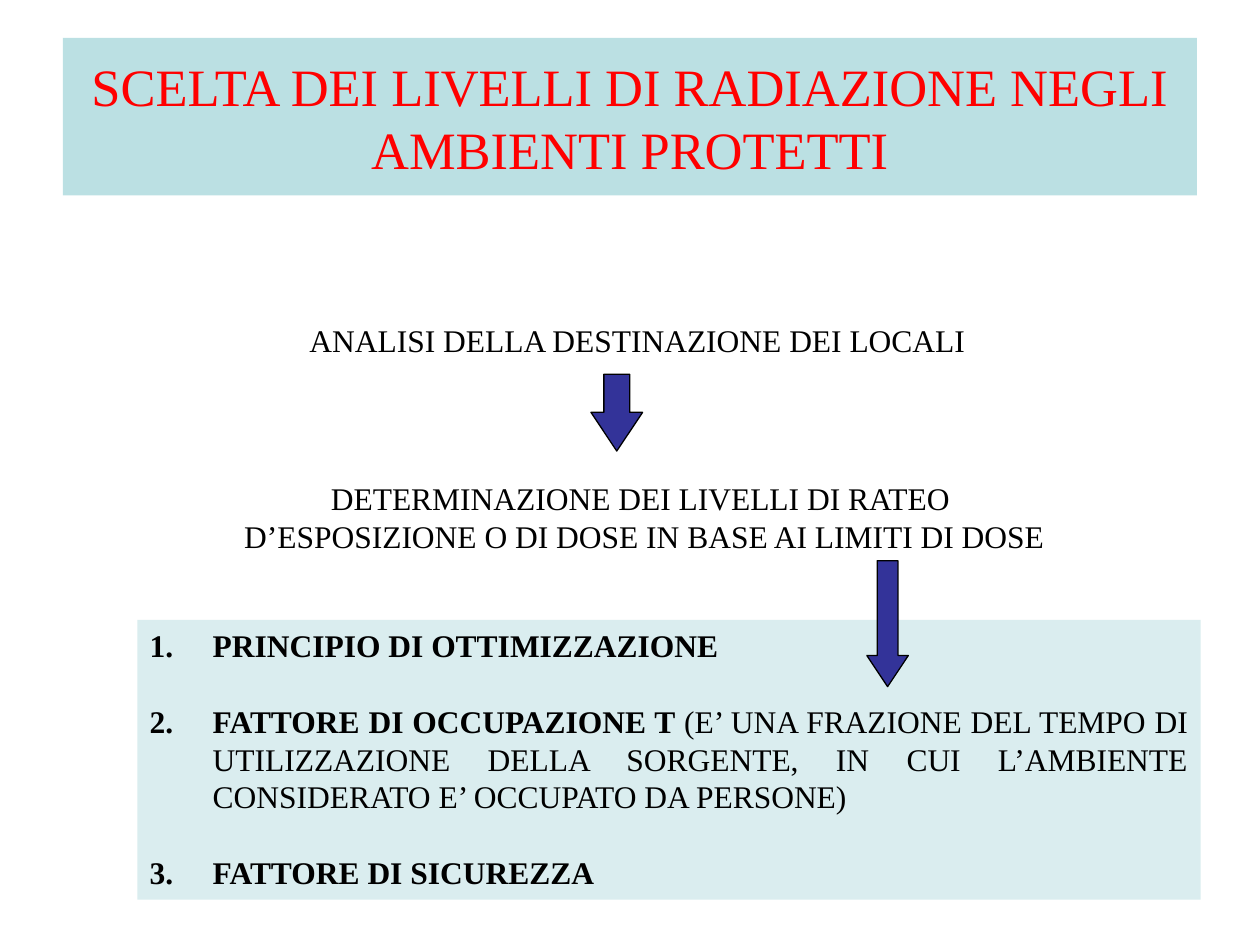
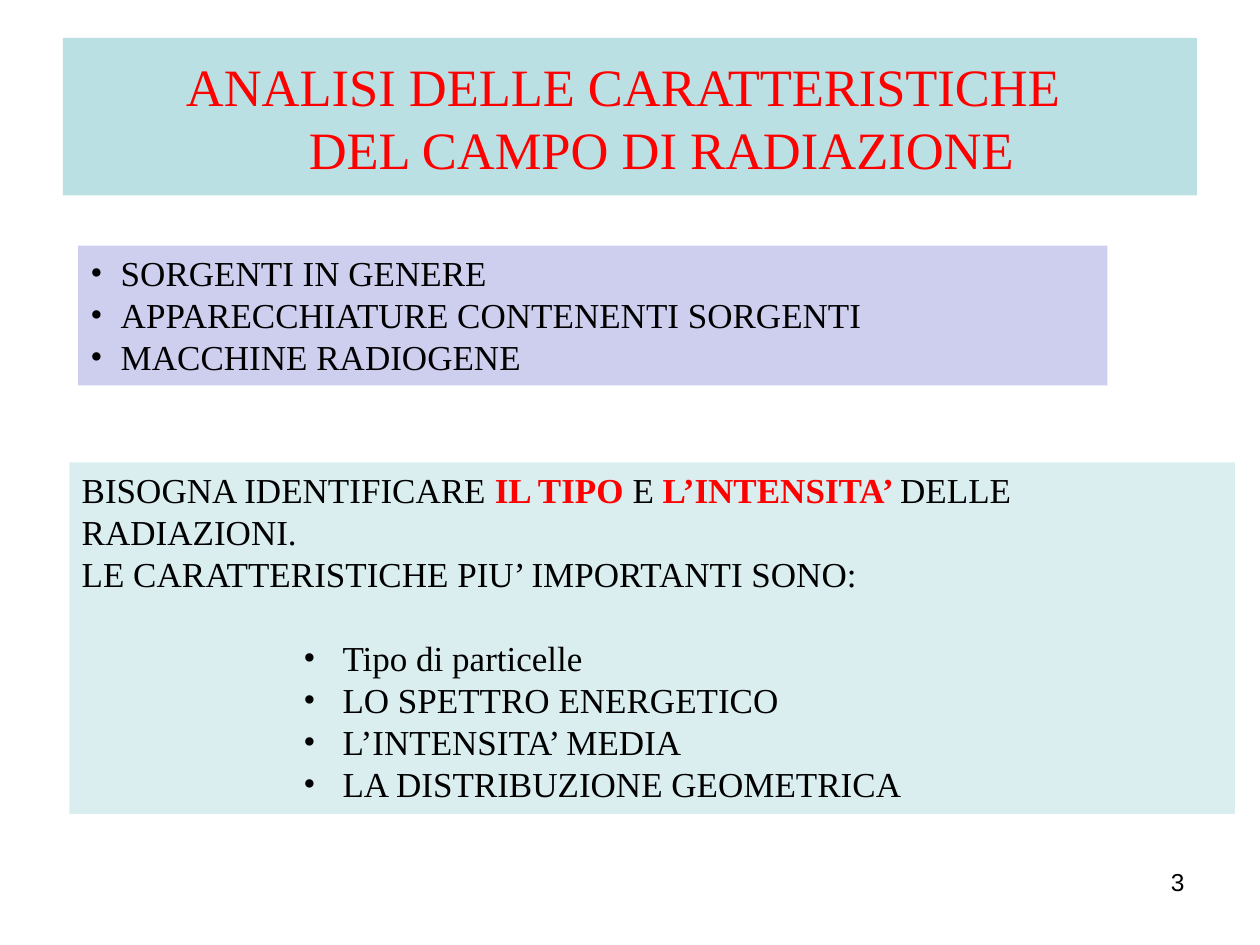
import pptx
import pptx.util
import pptx.dml.color
import pptx.enum.shapes
import pptx.enum.text
import pptx.oxml.xmlchemy
from lxml import etree

Inches, Pt = pptx.util.Inches, pptx.util.Pt
RGBColor = pptx.dml.color.RGBColor
ALIGN = pptx.enum.text.PP_ALIGN
SHAPE = pptx.enum.shapes.MSO_SHAPE

BLACK = RGBColor(0x00, 0x00, 0x00)
RED = RGBColor(0xFF, 0x00, 0x00)
BAND = RGBColor(0xBB, 0xE0, 0xE3)
PALE_TEAL = RGBColor(0xDA, 0xED, 0xEF)
LILAC = RGBColor(0xCE, 0xCE, 0xEF)
NAVY = RGBColor(0x33, 0x33, 0x99)
SERIF, SANS = "Times New Roman", "Arial"
LINE_HEIGHT = 1.2


def add_block(s, box, paragraphs, size, fill=None, align=ALIGN.LEFT, font=SERIF, color=BLACK):
    """Add a text block; each paragraph is a list of (text, bold, colour or None) runs."""
    box = [Inches(v) for v in box]
    if fill is None:
        sp = s.shapes.add_textbox(*box)
    else:
        sp = s.shapes.add_shape(SHAPE.RECTANGLE, *box)
        sp.shadow.inherit = False
        sp.fill.solid()
        sp.fill.fore_color.rgb = fill
        sp.line.fill.background()
    tf = sp.text_frame
    tf.word_wrap = True
    tf.vertical_anchor = pptx.enum.text.MSO_ANCHOR.TOP
    for i, runs in enumerate(paragraphs):
        p = tf.add_paragraph() if i else tf.paragraphs[0]
        p.alignment = align
        p.text = "".join(runs[0][0]) if len(runs) == 1 else ""
        for text, bold, run_color in runs:
            if len(runs) > 1:
                p.add_run().text = text
            for r in p.runs[-1:] if len(runs) > 1 else p.runs:
                r.font.name, r.font.size, r.font.bold = font, Pt(size), bold
                r.font.color.rgb = run_color or color
    return tf


def set_marker(p, margin, hanging, tag=None, **attributes):
    """Give a paragraph a hanging indent and, if a tag is named, a bullet or number."""
    pPr = p._p.get_or_add_pPr()
    pPr.set("marL", str(Inches(margin)))
    pPr.set("indent", str(-Inches(hanging)))
    if tag:
        ns = pptx.oxml.ns.qn("a:" + tag)
        if tag == "buChar":
            etree.SubElement(pPr, pptx.oxml.ns.qn("a:buFont"), typeface=SERIF)
        etree.SubElement(pPr, ns, **attributes)


prs = pptx.Presentation()
prs.slide_width, prs.slide_height = Inches(10), Inches(7.5)

# Shared title band
titles = ["SCELTA DEI LIVELLI DI RADIAZIONE NEGLI AMBIENTI PROTETTI",
          "ANALISI DELLE CARATTERISTICHE \vDEL CAMPO DI RADIAZIONE"]
title_frames = []
for title in titles:
    s = prs.slides.add_slide(prs.slide_layouts[6])
    tf = add_block(s, (0.5, 0.3, 9, 1.25), [[(title, False, None)]], 30, BAND, ALIGN.CENTER, color=RED)
    tf.vertical_anchor = pptx.enum.text.MSO_ANCHOR.MIDDLE
    title_frames.append(tf)
levels_slide, field_slide = prs.slides
set_marker(title_frames[1].paragraphs[0], 0.5, 0.5)

# Slide 1: steps leading to the protection criteria
steps = [((0.31, 2.5, 9.5, 0.4), ["ANALISI DELLA DESTINAZIONE DEI LOCALI"]),
         ((0.86, 3.75, 8.51, 0.71), ["DETERMINAZIONE DEI LIVELLI DI RATEO ",
                                     "D’ESPOSIZIONE O DI DOSE IN BASE AI LIMITI DI DOSE"])]
for box, lines in steps:
    add_block(levels_slide, box, [[(line, False, None)] for line in lines], 18, align=ALIGN.CENTER)

criteria = [[("PRINCIPIO DI OTTIMIZZAZIONE", True, None)],
            [("FATTORE DI OCCUPAZIONE T ", True, None),
             ("(E’ UNA FRAZIONE DEL TEMPO DI UTILIZZAZIONE DELLA SORGENTE, IN CUI "
              "L’AMBIENTE CONSIDERATO E’ OCCUPATO DA PERSONE)", False, None)],
            [("FATTORE DI SICUREZZA", True, None)]]
tf = add_block(levels_slide, (1.09, 4.92, 8.44, 2.22), criteria, 18, PALE_TEAL, ALIGN.JUSTIFY)
for i, p in enumerate(tf.paragraphs):
    if i:
        p.space_before = Pt(18 * LINE_HEIGHT)
    set_marker(p, 0.5, 0.5, "buAutoNum", type="arabicPeriod")

for box in [(4.69, 2.97, 0.41, 0.61), (6.88, 4.45, 0.33, 1)]:
    arrow = levels_slide.shapes.add_shape(SHAPE.DOWN_ARROW, *[Inches(v) for v in box])
    arrow.shadow.inherit = False
    arrow.adjustments[0], arrow.adjustments[1] = 0.5, 0.75
    arrow.fill.solid()
    arrow.fill.fore_color.rgb = NAVY
    arrow.line.color.rgb = BLACK
    arrow.line.width = Pt(0.75)

# Slide 2: sources and the characteristics of their radiation
add_block(field_slide, (7.17, 6.83, 2.33, 0.52), [[("3", False, None)]], 14, align=ALIGN.RIGHT, font=SANS)

sources = ["SORGENTI IN GENERE", "APPARECCHIATURE CONTENENTI SORGENTI", "MACCHINE RADIOGENE"]
tf = add_block(field_slide, (0.62, 1.95, 8.17, 1.11), [[(t, False, None)] for t in sources], 20, LILAC)
for p in tf.paragraphs:
    set_marker(p, 0.24, 0.24, "buChar", char="•")

intro = [[("BISOGNA IDENTIFICARE ", False, None), ("IL TIPO ", True, RED), ("E ", False, None),
          ("L’INTENSITA’ ", True, RED), ("DELLE RADIAZIONI.", False, None)],
         [("LE CARATTERISTICHE PIU’ IMPORTANTI SONO:", False, None)]]
features = ["Tipo di particelle", "LO SPETTRO ENERGETICO", "L’INTENSITA’ MEDIA",
            "LA DISTRIBUZIONE GEOMETRICA"]
tf = add_block(field_slide, (0.55, 3.67, 9.25, 2.79),
               intro + [[(t, False, None)] for t in features], 20, PALE_TEAL)
feature_paragraphs = tf.paragraphs[len(intro):]
feature_paragraphs[0].space_before = Pt(20 * LINE_HEIGHT)
for p in feature_paragraphs:
    set_marker(p, 2.07, 0.31, "buChar", char="•")

prs.save("out.pptx")
